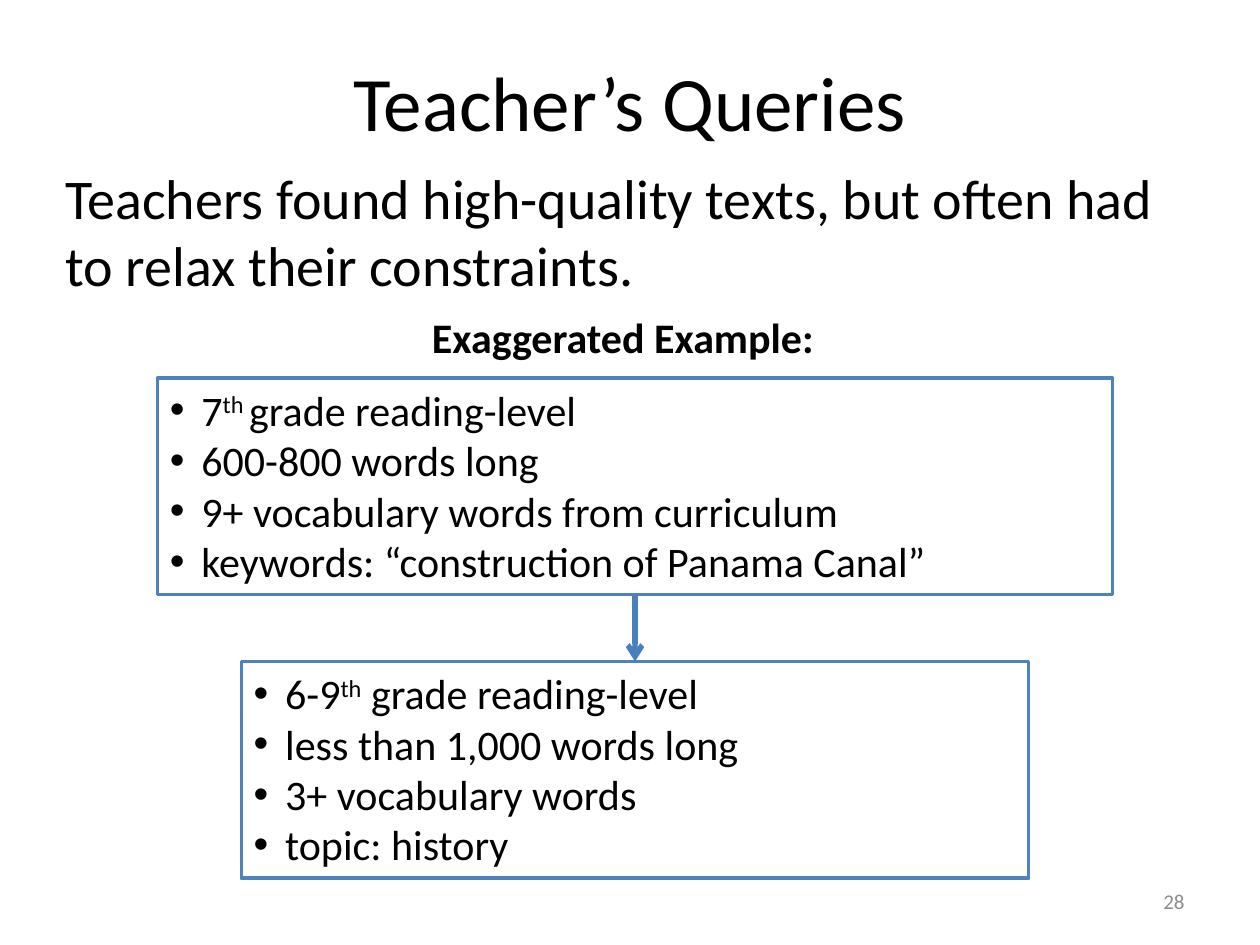
from dataclasses import dataclass

from lxml.etree import SubElement
from pptx import Presentation
from pptx.dml.color import RGBColor
from pptx.enum.shapes import MSO_CONNECTOR, MSO_SHAPE
from pptx.enum.text import MSO_ANCHOR, PP_ALIGN
from pptx.oxml.ns import qn
from pptx.util import Inches, Pt


@dataclass(frozen=True)
class Theme:
    font: str = "Calibri"
    text: RGBColor = RGBColor(0, 0, 0)
    muted: RGBColor = RGBColor(0x8C, 0x8C, 0x8C)
    background: RGBColor = RGBColor(0xFF, 0xFF, 0xFF)
    border: RGBColor = RGBColor(0x4F, 0x81, 0xBD)
    arrow: RGBColor = RGBColor(0x4B, 0x7E, 0xBC)
    title_size: int = 44
    body_size: int = 32
    list_size: int = 24
    number_size: int = 12


def add_bullet(paragraph):
    properties = paragraph._p.get_or_add_pPr()
    properties.set("marL", str(Inches(0.25)))
    properties.set("indent", str(-Inches(0.25)))
    SubElement(properties, qn("a:buFont"), typeface="Arial")
    SubElement(properties, qn("a:buChar"), char="•")


def write_text(paragraph, text, *, font, size, color, bold=False,
               align=PP_ALIGN.LEFT, space_before=0, bullet=False):
    """Fill a paragraph; text between two carets is superscript."""
    paragraph.alignment = align
    paragraph.space_before = Pt(space_before)
    if bullet:
        add_bullet(paragraph)
    for index, part in enumerate(text.split("^")):
        run = paragraph.add_run()
        run.text = part
        run.font.name = font
        run.font.size = Pt(size)
        run.font.bold = bold
        run.font.color.rgb = color
        if index % 2:
            run._r.get_or_add_rPr().set("baseline", "30000")


class SlideBuilder:
    def __init__(self, slide, theme):
        self.slide = slide
        self.theme = theme

    def text(self, text, left, top, width, height, *, size, color=None,
             anchor=MSO_ANCHOR.TOP, wrap=True, **text_format):
        shape = self.slide.shapes.add_textbox(
            Inches(left), Inches(top), Inches(width), Inches(height))
        frame = shape.text_frame
        frame.word_wrap = wrap
        frame.vertical_anchor = anchor
        write_text(frame.paragraphs[0], text, font=self.theme.font, size=size,
                   color=color or self.theme.text, **text_format)

    def bullet_box(self, items, left, top, width, height):
        shape = self.slide.shapes.add_shape(
            MSO_SHAPE.RECTANGLE, Inches(left), Inches(top),
            Inches(width), Inches(height))
        shape.shadow.inherit = False
        shape.fill.solid()
        shape.fill.fore_color.rgb = self.theme.background
        shape.line.color.rgb = self.theme.border
        shape.line.width = Pt(2)
        frame = shape.text_frame
        frame.word_wrap = True
        frame.vertical_anchor = MSO_ANCHOR.TOP
        for index, item in enumerate(items):
            paragraph = frame.add_paragraph() if index else frame.paragraphs[0]
            write_text(paragraph, item, font=self.theme.font,
                       size=self.theme.list_size, color=self.theme.text,
                       bullet=True)

    def down_arrow(self, x, top, bottom):
        connector = self.slide.shapes.add_connector(
            MSO_CONNECTOR.STRAIGHT, Inches(x), Inches(top),
            Inches(x), Inches(bottom))
        connector.line.color.rgb = self.theme.arrow
        connector.line.width = Pt(3)
        SubElement(connector.line._get_or_add_ln(), qn("a:tailEnd"), type="arrow")
        SubElement(connector._element.spPr, qn("a:effectLst"))


def main():
    presentation = Presentation()
    presentation.slide_width = Inches(10)
    presentation.slide_height = Inches(7.5)
    slide = presentation.slides.add_slide(presentation.slide_layouts[6])
    theme = Theme()
    builder = SlideBuilder(slide, theme)

    builder.text("Teacher’s Queries", 0.5, 0.17, 9, 1.25,
                 size=theme.title_size, anchor=MSO_ANCHOR.MIDDLE,
                 align=PP_ALIGN.CENTER)
    builder.text("Teachers found high-quality texts, but often had "
                 "to relax their constraints.", 0.42, 1.25, 9, 1.25,
                 size=theme.body_size, space_before=0.2 * theme.body_size)
    builder.text("28", 7.17, 6.95, 2.33, 0.4, size=theme.number_size,
                 color=theme.muted, anchor=MSO_ANCHOR.MIDDLE,
                 align=PP_ALIGN.RIGHT)
    builder.text("Exaggerated Example:", 3.33, 2.42, 3.27, 0.51,
                 size=theme.list_size, bold=True, wrap=False)

    center, box_height = 5.04, 1.72
    request_top, relaxed_top = 3, 5.25
    boxes = [
        (request_top, 7.58, ["7^th ^grade reading-level",
                             "600-800 words long",
                             "9+ vocabulary words from curriculum",
                             "keywords: “construction of Panama Canal”"]),
        (relaxed_top, 6.25, ["6-9^th^ grade reading-level",
                             "less than 1,000 words long",
                             "3+ vocabulary words",
                             "topic: history"]),
    ]
    for top, width, items in boxes:
        builder.bullet_box(items, center - width / 2, top, width, box_height)
    builder.down_arrow(center, request_top + box_height, relaxed_top)

    presentation.save("out.pptx")


if __name__ == "__main__":
    main()
